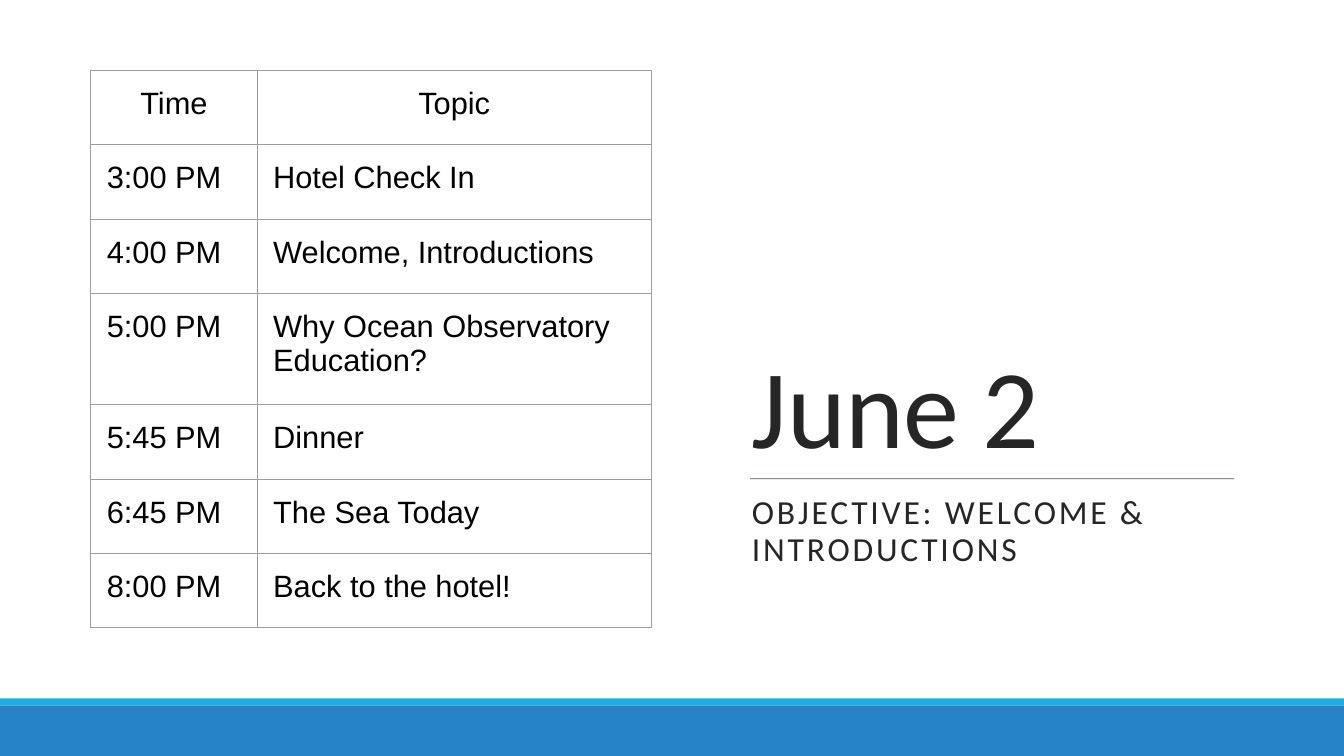
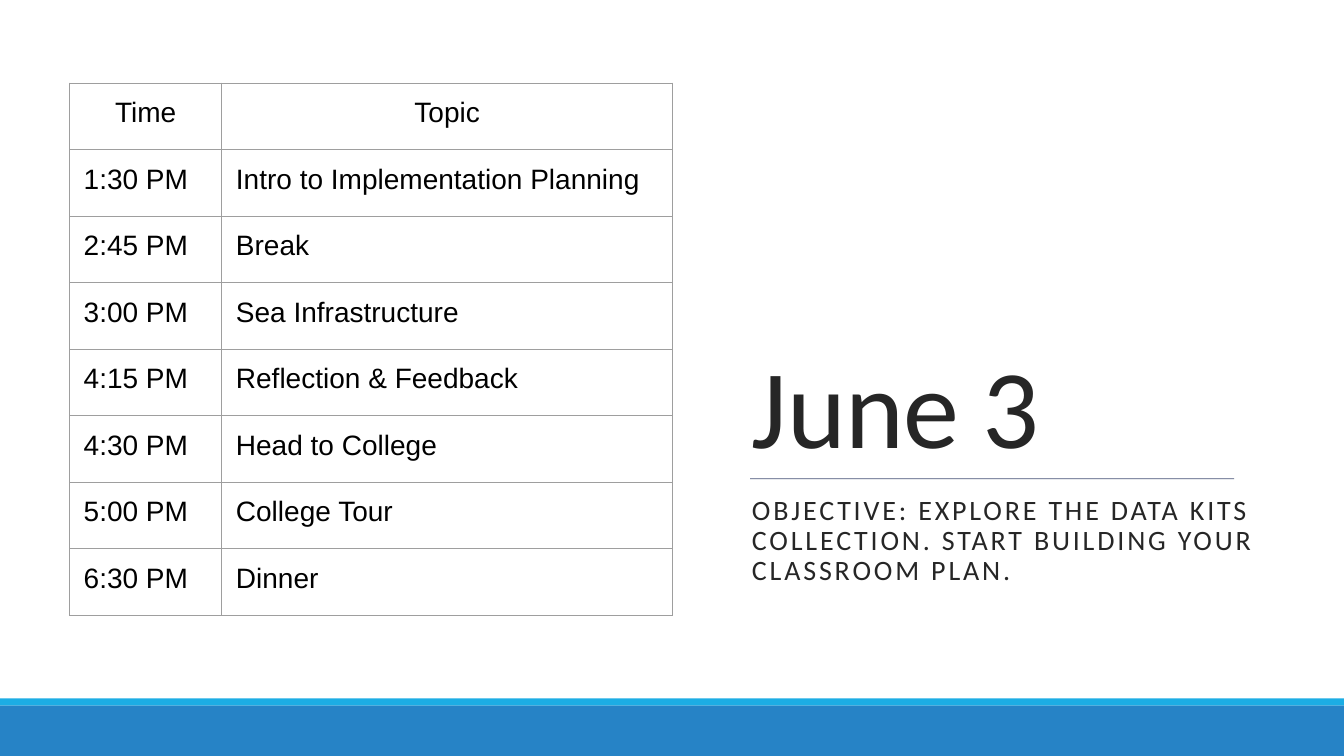
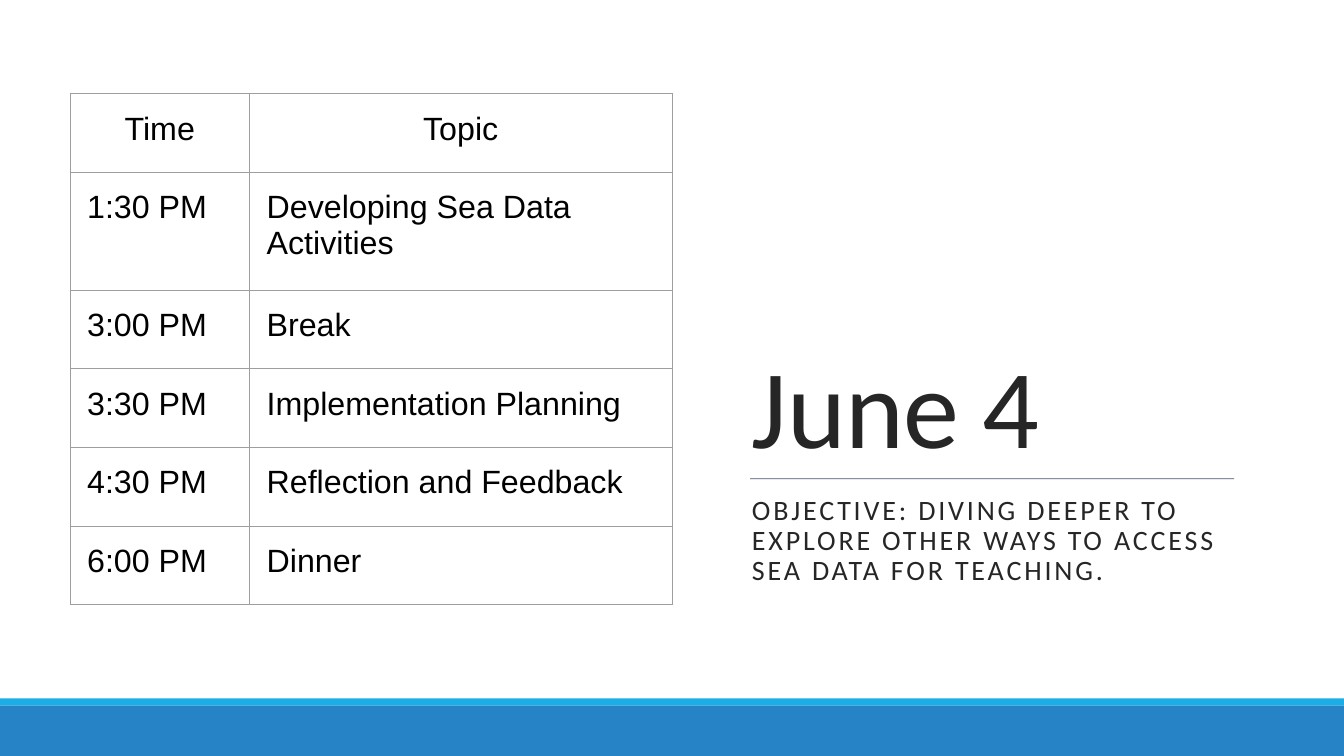
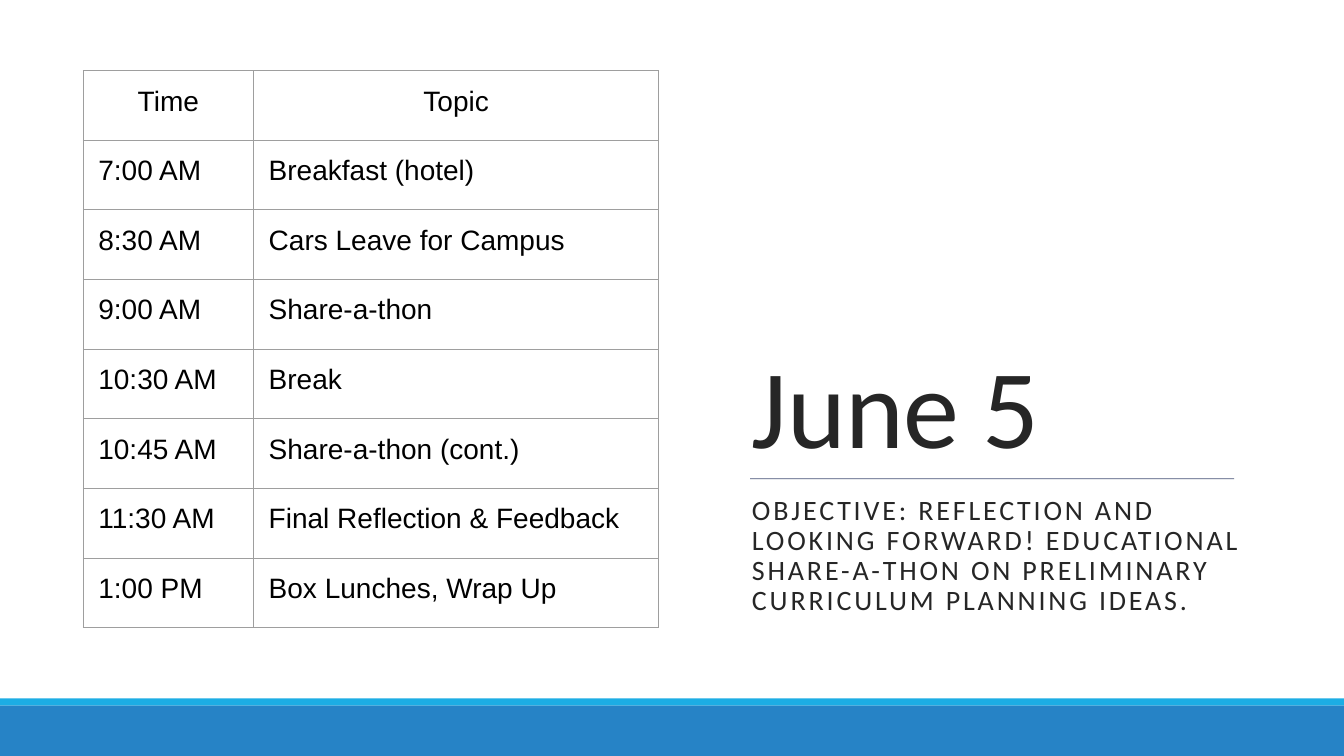
from lxml import etree
from pptx import Presentation
from pptx.dml.color import RGBColor
from pptx.enum.shapes import MSO_CONNECTOR, MSO_SHAPE
from pptx.enum.text import MSO_ANCHOR, PP_ALIGN
from pptx.oxml import parse_xml
from pptx.oxml.ns import nsdecls, qn
from pptx.util import Inches, Pt

RECTANGLE = MSO_SHAPE.RECTANGLE
STRAIGHT = MSO_CONNECTOR.STRAIGHT
TOP, BOTTOM = MSO_ANCHOR.TOP, MSO_ANCHOR.BOTTOM
LEFT, CENTER = PP_ALIGN.LEFT, PP_ALIGN.CENTER

COLORS = {
    "ink": "262626",
    "black": "000000",
    "rule": "344068",
    "stripe": "1CADE4",
    "band": "2683C6",
    "grid": "9E9E9E",
}
TITLE_FONT, TABLE_FONT = "Calibri", "Arial"
PAGE_WIDTH, PAGE_HEIGHT = 13.33, 7.5
BODY_HEIGHT = 6.93
TABLE_CENTER = 3.68
TALL_RATIO = 1.5
BANDS = [(BODY_HEIGHT, 0.07, "stripe"), (7, 0.5, "band")]
HEADER = ("Time", "Topic")

DAYS = [
    {
        "title": "June 2",
        "objective": "OBJECTIVE: WELCOME & INTRODUCTIONS",
        "objective_size": 24,
        "columns": (1.65, 3.91), "height": 5.53, "size": 22, "inset": 0.16,
        "tall_rows": (3,),
        "agenda": [
            ("3:00 PM", "Hotel Check In"),
            ("4:00 PM", "Welcome, Introductions"),
            ("5:00 PM", "Why Ocean Observatory Education?"),
            ("5:45 PM", "Dinner"),
            ("6:45 PM", "The Sea Today"),
            ("8:00 PM", "Back to the hotel!"),
        ],
    },
    {
        "title": "June 3",
        "objective": "OBJECTIVE: EXPLORE THE DATA KITS COLLECTION. "
                     "START BUILDING YOUR CLASSROOM PLAN.",
        "objective_size": 20,
        "columns": (1.51, 4.47), "height": 5.28, "size": 20, "inset": 0.14,
        "tall_rows": (),
        "agenda": [
            ("1:30 PM", "Intro to Implementation Planning"),
            ("2:45 PM", "Break"),
            ("3:00 PM", "Sea Infrastructure"),
            ("4:15 PM", "Reflection & Feedback"),
            ("4:30 PM", "Head to College"),
            ("5:00 PM", "College Tour"),
            ("6:30 PM", "Dinner"),
        ],
    },
    {
        "title": "June 4",
        "objective": "OBJECTIVE: DIVING DEEPER TO EXPLORE OTHER WAYS "
                     "TO ACCESS SEA DATA FOR TEACHING.",
        "objective_size": 20,
        "columns": (1.78, 4.19), "height": 5.07, "size": 23, "inset": 0.17,
        "tall_rows": (1,),
        "agenda": [
            ("1:30 PM", "Developing Sea Data Activities"),
            ("3:00 PM", "Break"),
            ("3:30 PM", "Implementation Planning"),
            ("4:30 PM", "Reflection and Feedback"),
            ("6:00 PM", "Dinner"),
        ],
    },
    {
        "title": "June 5",
        "objective": "OBJECTIVE: REFLECTION AND LOOKING FORWARD! EDUCATIONAL "
                     "SHARE-A-THON ON PRELIMINARY CURRICULUM PLANNING IDEAS.",
        "objective_size": 20,
        "columns": (1.69, 4.02), "height": 5.53, "size": 20, "inset": 0.15,
        "tall_rows": (),
        "agenda": [
            ("7:00 AM", "Breakfast (hotel)"),
            ("8:30 AM", "Cars Leave for Campus"),
            ("9:00 AM", "Share-a-thon"),
            ("10:30 AM", "Break"),
            ("10:45 AM", "Share-a-thon (cont.)"),
            ("11:30 AM", "Final Reflection & Feedback"),
            ("1:00 PM", "Box Lunches, Wrap Up"),
        ],
    },
]


def color(name):
    return RGBColor.from_string(COLORS[name])


def style_font(para, name, size, ink):
    para.font.name = name
    para.font.size = Pt(size)
    para.font.color.rgb = color(ink)


def add_text(page, text, place, size, spacing, line_spacing, anchor):
    box = page.shapes.add_textbox(*map(Inches, place))
    frame = box.text_frame
    frame.word_wrap = True
    frame.vertical_anchor = anchor
    para = frame.paragraphs[0]
    span = para.add_run()
    span.text = text
    span.font._element.set("spc", str(round(spacing * 100)))
    para.line_spacing = line_spacing
    style_font(para, TITLE_FONT, size, "ink")
    return para


def add_bands(page):
    for top, height, fill in BANDS:
        band = page.shapes.add_shape(
            RECTANGLE, 0, Inches(top), Inches(PAGE_WIDTH), Inches(height))
        band.shadow.inherit = False
        band.fill.solid()
        band.fill.fore_color.rgb = color(fill)
        band.line.fill.background()


def add_rule(page):
    rule = page.shapes.add_connector(
        STRAIGHT, *map(Inches, (7.44, 4.75, 12.24, 4.75)))
    rule.line.width = Pt(0.5)
    rule.line.color.rgb = color("rule")
    properties = rule._element.spPr
    tint = next(properties.iter(qn("a:srgbClr")))
    etree.SubElement(tint, qn("a:alpha"), val="90000")
    etree.SubElement(properties, qn("a:effectLst"))


def add_borders(cell):
    properties = cell._tc.get_or_add_tcPr()
    for side in ("lnL", "lnR", "lnT", "lnB"):
        properties.append(parse_xml(
            f'<a:{side} {nsdecls("a")} w="{Pt(0.75)}"><a:solidFill>'
            f'<a:srgbClr val="{COLORS["grid"]}"/></a:solidFill></a:{side}>'))


def fill_cell(cell, text, size, inset, alignment):
    add_borders(cell)
    cell.fill.background()
    cell.margin_left = cell.margin_right = Inches(inset)
    cell.margin_top = cell.margin_bottom = Inches(inset)
    cell.vertical_anchor = TOP
    cell.text = text
    para = cell.text_frame.paragraphs[0]
    para.alignment = alignment
    style_font(para, TABLE_FONT, size, "black")


def add_agenda(page, day):
    rows = [HEADER] + day["agenda"]
    width, height = sum(day["columns"]), day["height"]
    units = [TALL_RATIO if index in day["tall_rows"] else 1
             for index in range(len(rows))]
    place = (TABLE_CENTER - width / 2, (BODY_HEIGHT - height) / 2, width, height)
    table = page.shapes.add_table(
        len(rows), len(HEADER), *map(Inches, place)).table
    table.first_row = table.horz_banding = False
    for column, column_width in zip(table.columns, day["columns"]):
        column.width = Inches(column_width)
    for index, texts in enumerate(rows):
        table.rows[index].height = Inches(height * units[index] / sum(units))
        alignment = CENTER if index == 0 else LEFT
        for cell, text in zip(table.rows[index].cells, texts):
            fill_cell(cell, text, day["size"], day["inset"], alignment)


def add_day(deck, day):
    page = deck.slides.add_slide(deck.slide_layouts[6])
    add_bands(page)
    add_text(page, day["title"], (7.36, 0.7, 5.26, 4.03), 80, -0.5, 0.85, BOTTOM)
    add_rule(page)
    objective = add_text(page, day["objective"], (7.36, 4.87, 5.28, 1.35),
                         day["objective_size"], 2, 0.9, TOP)
    objective.space_before = Pt(12)
    objective.space_after = Pt(2)
    add_agenda(page, day)


def main():
    deck = Presentation()
    deck.slide_width = Inches(PAGE_WIDTH)
    deck.slide_height = Inches(PAGE_HEIGHT)
    for day in DAYS:
        add_day(deck, day)
    deck.save("out.pptx")


if __name__ == "__main__":
    main()
